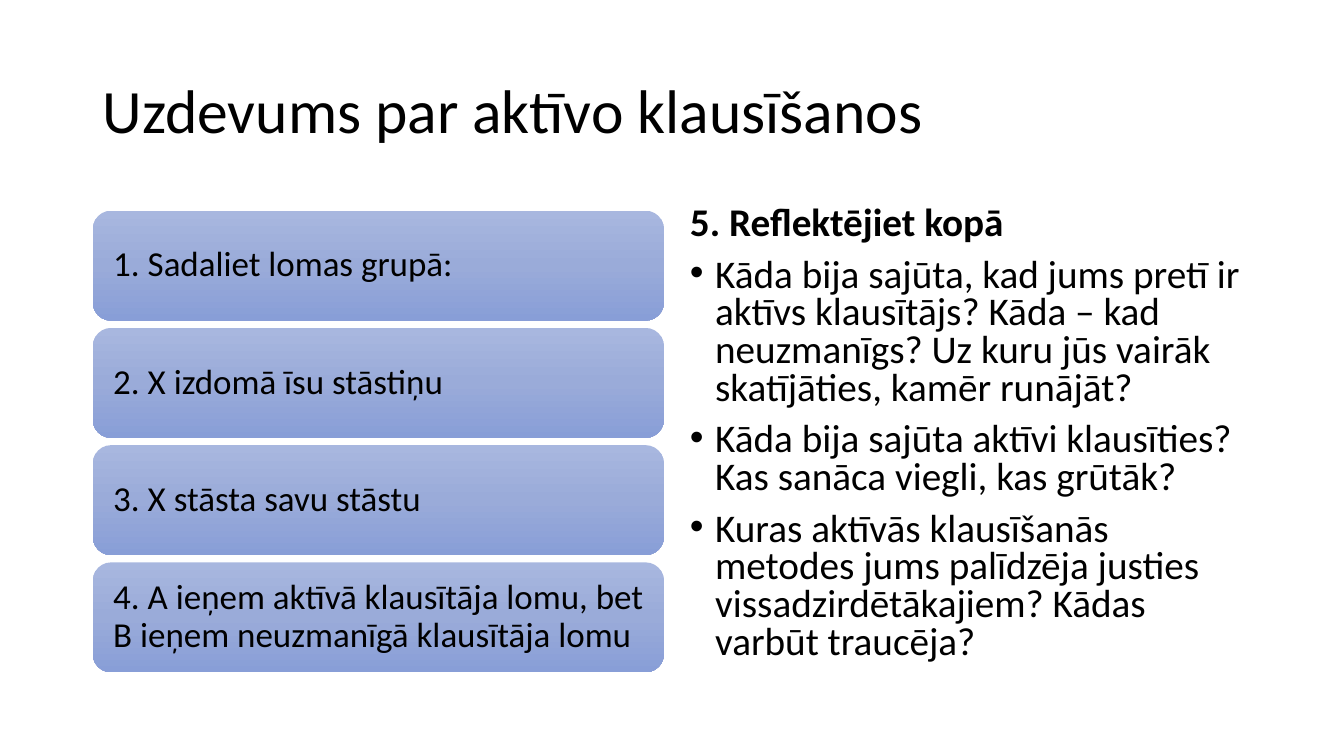
from copy import deepcopy

from lxml import etree
from pptx import Presentation
from pptx import util as u
from pptx.dml.color import RGBColor
from pptx.enum import shapes, text
from pptx.oxml.ns import qn

TITLE = "Uzdevums par aktīvo klausīšanos"
STEPS = [
    "1. Sadaliet lomas grupā:",
    "2. X izdomā īsu stāstiņu",
    "3. X stāsta savu stāstu",
    "4. A ieņem aktīvā klausītāja lomu, bet B ieņem neuzmanīgā klausītāja lomu",
]
REFLECTION = "5. Reflektējiet kopā"
QUESTIONS = [
    "Kāda bija sajūta, kad jums pretī ir aktīvs klausītājs? Kāda – kad neuzmanīgs? "
    "Uz kuru jūs vairāk skatījāties, kamēr runājāt?",
    "Kāda bija sajūta aktīvi klausīties? Kas sanāca viegli, kas grūtāk?",
    "Kuras aktīvās klausīšanās metodes jums palīdzēja justies vissadzirdētākajiem? "
    "Kādas varbūt traucēja?",
]

BLACK = RGBColor(0x00, 0x00, 0x00)
STEP_SHADES = [
    RGBColor(0xA8, 0xB7, 0xDF),
    RGBColor(0x9A, 0xAB, 0xD9),
    RGBColor(0x88, 0x9E, 0xD7),
]

WIDTH, HEIGHT = 13.33, 7.5
MARGIN, GUTTER = 0.92, 0.16
CONTENT = WIDTH - 2 * MARGIN
COLUMN = (CONTENT - GUTTER) / 2
STEP_TOP, STEP_HEIGHT, STEP_PITCH = 2.09, 1.09, 1.163


def style(paragraph, size, spacing, bold=False):
    paragraph.alignment = text.PP_ALIGN.LEFT
    paragraph.line_spacing = spacing
    paragraph.font.name = "Calibri"
    paragraph.font.size = u.Pt(size)
    paragraph.font.bold = bold
    paragraph.font.color.rgb = BLACK


def bullet(paragraph):
    props = paragraph._p.get_or_add_pPr()
    props.set("marL", str(u.Inches(0.25)))
    props.set("indent", str(u.Inches(-0.25)))
    etree.SubElement(props, qn("a:buFont"), typeface="Arial")
    etree.SubElement(props, qn("a:buChar"), char="•")


def shade(shape):
    shape.fill.gradient()
    shape.fill.gradient_angle = 270
    stops = shape._element.spPr.find(qn("a:gradFill")).find(qn("a:gsLst"))
    middle = deepcopy(stops[0])
    middle.set("pos", "50000")
    stops.insert(1, middle)
    for stop, color in zip(shape.fill.gradient_stops, STEP_SHADES):
        stop.color.rgb = color


def add_text(slide, left, top, width, height, anchor):
    box = slide.shapes.add_textbox(*map(u.Inches, (left, top, width, height)))
    frame = box.text_frame
    frame.word_wrap = True
    frame.vertical_anchor = anchor
    return frame


def add_step(slide, row, wording):
    place = (MARGIN, STEP_TOP + row * STEP_PITCH, COLUMN, STEP_HEIGHT)
    step = slide.shapes.add_shape(
        shapes.MSO_SHAPE.ROUNDED_RECTANGLE, *map(u.Inches, place))
    step.shadow.inherit = False
    step.line.fill.background()
    shade(step)
    frame = step.text_frame
    frame.word_wrap = True
    frame.vertical_anchor = text.MSO_ANCHOR.MIDDLE
    frame.margin_left = frame.margin_right = u.Inches(0.15)
    frame.text = wording
    style(frame.paragraphs[0], 25, 0.9)


def main():
    deck = Presentation()
    deck.slide_width, deck.slide_height = u.Inches(WIDTH), u.Inches(HEIGHT)
    slide = deck.slides.add_slide(deck.slide_layouts[6])

    title = add_text(slide, MARGIN, 0.4, CONTENT, 1.45, text.MSO_ANCHOR.MIDDLE)
    title.text = TITLE
    style(title.paragraphs[0], 44, 0.9)

    for row, wording in enumerate(STEPS):
        add_step(slide, row, wording)

    reflection = add_text(slide, MARGIN + COLUMN + GUTTER, 2, COLUMN, 4.76,
                          text.MSO_ANCHOR.TOP)
    reflection.text = REFLECTION
    style(reflection.paragraphs[0], 28, 0.8, bold=True)
    for wording in QUESTIONS:
        question = reflection.add_paragraph()
        question.text = wording
        bullet(question)
        question.space_before = u.Pt(10)
        style(question, 28, 0.8)

    deck.save("out.pptx")


if __name__ == "__main__":
    main()
